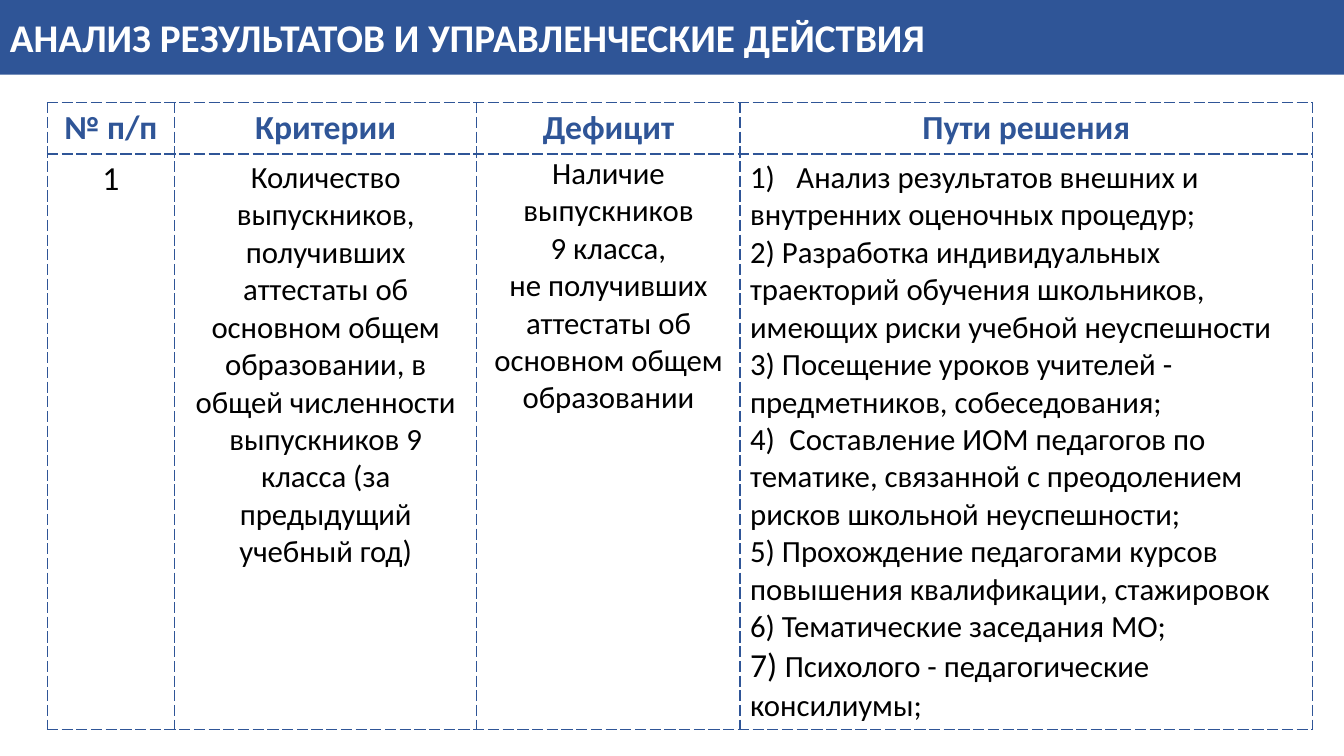
from dataclasses import dataclass

from lxml.etree import SubElement
from pptx import Presentation
from pptx.dml.color import RGBColor
from pptx.enum.shapes import MSO_SHAPE
from pptx.enum.text import MSO_ANCHOR, PP_ALIGN
from pptx.oxml import parse_xml
from pptx.oxml.ns import nsdecls, qn
from pptx.util import Inches, Pt

BLUE = RGBColor(0x2F, 0x55, 0x97)
BLACK = RGBColor(0, 0, 0)
WHITE = RGBColor(0xFF, 0xFF, 0xFF)


@dataclass(frozen=True)
class Style:
    size: int
    color: RGBColor = BLACK
    bold: bool = False


@dataclass(frozen=True)
class Span:
    text: str
    style: Style


@dataclass(frozen=True)
class Para:
    spans: tuple[Span, ...]
    align: PP_ALIGN = PP_ALIGN.CENTER
    tab: float = 0  # tab stop of a numbered item, in inches


@dataclass(frozen=True)
class CellText:
    paras: tuple[Para, ...]
    margins: tuple[float, ...] = (0.1, 0.05, 0.1, 0.05)


TITLE = Style(28, WHITE, True)
HEADER = Style(24, BLUE, True)
NUMBER = Style(24)
BODY = Style(22)


def centred(style: Style, *lines: str) -> tuple[Para, ...]:
    return tuple(Para((Span(line, style),)) for line in lines)


def item(text: str, tab: float = 0.29, lead: tuple[Span, ...] = ()) -> Para:
    return Para((*lead, Span(text, BODY)), PP_ALIGN.LEFT, tab)


SOLUTIONS = (
    item("\tАнализ результатов внешних и внутренних оценочных процедур;", 0.46),
    item(" Разработка индивидуальных траекторий обучения школьников, "
         "имеющих риски учебной неуспешности", 0.39),
    item(" Посещение уроков учителей - предметников, собеседования;"),
    item("\tСоставление ИОМ педагогов по тематике, связанной с преодолением "
         "рисков школьной неуспешности;", 0.39),
    item(" Прохождение педагогами курсов повышения квалификации, стажировок"),
    item(" Тематические заседания МО;"),
    item("Психолого - педагогические консилиумы;", lead=(Span(" ", NUMBER),)),
)
HEADINGS = ("№ п/п", "Критерии", "Дефицит", "Пути решения")
ROWS = (
    tuple(CellText(centred(HEADER, h)) for h in HEADINGS),
    (
        CellText(centred(NUMBER, "1")),
        CellText(centred(BODY, "Количество выпускников, получивших аттестаты об "
                               "основном общем образовании, в общей численности "
                               "выпускников 9 класса (за предыдущий учебный год)")),
        CellText(centred(BODY, "Наличие выпускников", "9 класса,",
                         "не получивших аттестаты об основном общем образовании"),
                 (0.01, 0.01, 0.01, 0)),
        CellText(SOLUTIONS),
    ),
)
COLUMN_WIDTHS = (1.26, 3, 2.61, 5.68)
ROW_HEIGHTS = (0.47, 4.9)


def add_numbering(p, tab: float) -> None:
    """Number the paragraph as 1), 2), ... with one left tab stop."""
    pPr = p._p.get_or_add_pPr()
    pPr.set("marL", "0")
    pPr.set("indent", "0")
    SubElement(pPr, qn("a:buFont"), typeface="+mj-lt")
    SubElement(pPr, qn("a:buAutoNum"), type="arabicParenR")
    tabs = SubElement(pPr, qn("a:tabLst"))
    SubElement(tabs, qn("a:tab"), pos=str(Inches(tab)), algn="l")


def write(tf, paras: tuple[Para, ...]) -> None:
    for i, para in enumerate(paras):
        p = tf.add_paragraph() if i else tf.paragraphs[0]
        p.alignment = para.align
        if para.tab:
            add_numbering(p, para.tab)
        for span in para.spans:
            r = p.add_run()
            r.text = span.text
            style = span.style
            font_values = {"name": "Calibri", "size": Pt(style.size), "bold": style.bold}
            for name, value in font_values.items():
                setattr(r.font, name, value)
            r.font.color.rgb = style.color


def add_borders(cell) -> None:
    tcPr = cell._tc.get_or_add_tcPr()
    for i, side in enumerate("LRTB"):
        tcPr.insert(i, parse_xml(
            f'<a:ln{side} {nsdecls("a")} w="{Pt(1)}"><a:solidFill>'
            f'<a:srgbClr val="{BLUE}"/></a:solidFill>'
            f'<a:prstDash val="dash"/></a:ln{side}>'))


def fill_cell(cell, content: CellText) -> None:
    for side, margin in zip(("left", "top", "right", "bottom"), content.margins):
        setattr(cell, f"margin_{side}", Inches(margin))
    cell.fill.background()
    add_borders(cell)
    write(cell.text_frame, content.paras)


def add_criteria_table(s) -> None:
    table = s.shapes.add_table(
        len(ROWS), len(COLUMN_WIDTHS), Inches(0.47), Inches(1.02),
        Inches(sum(COLUMN_WIDTHS)), Inches(sum(ROW_HEIGHTS))).table
    for name, value in {"first_row": False, "horz_banding": False}.items():
        setattr(table, name, value)
    for column, width in zip(table.columns, COLUMN_WIDTHS):
        column.width = Inches(width)
    for row, height, contents in zip(table.rows, ROW_HEIGHTS, ROWS):
        row.height = Inches(height)
        for cell, content in zip(row.cells, contents):
            fill_cell(cell, content)


def add_title_bar(s, text: str) -> None:
    sp = s.shapes.add_shape(MSO_SHAPE.RECTANGLE, 0, 0, Inches(13.33), Inches(0.74))
    sp.shadow.inherit = False
    sp.fill.solid()
    sp.fill.fore_color.rgb = BLUE
    sp.line.fill.background()
    tf = sp.text_frame
    for name, value in {"word_wrap": True, "vertical_anchor": MSO_ANCHOR.MIDDLE}.items():
        setattr(tf, name, value)
    write(tf, (Para((Span(text, TITLE),), PP_ALIGN.LEFT),))


def main() -> None:
    prs = Presentation()
    prs.slide_width, prs.slide_height = Inches(13.33), Inches(7.5)
    s = prs.slides.add_slide(prs.slide_layouts[6])
    add_criteria_table(s)
    add_title_bar(s, "АНАЛИЗ РЕЗУЛЬТАТОВ И УПРАВЛЕНЧЕСКИЕ ДЕЙСТВИЯ")
    prs.save("out.pptx")


if __name__ == "__main__":
    main()
